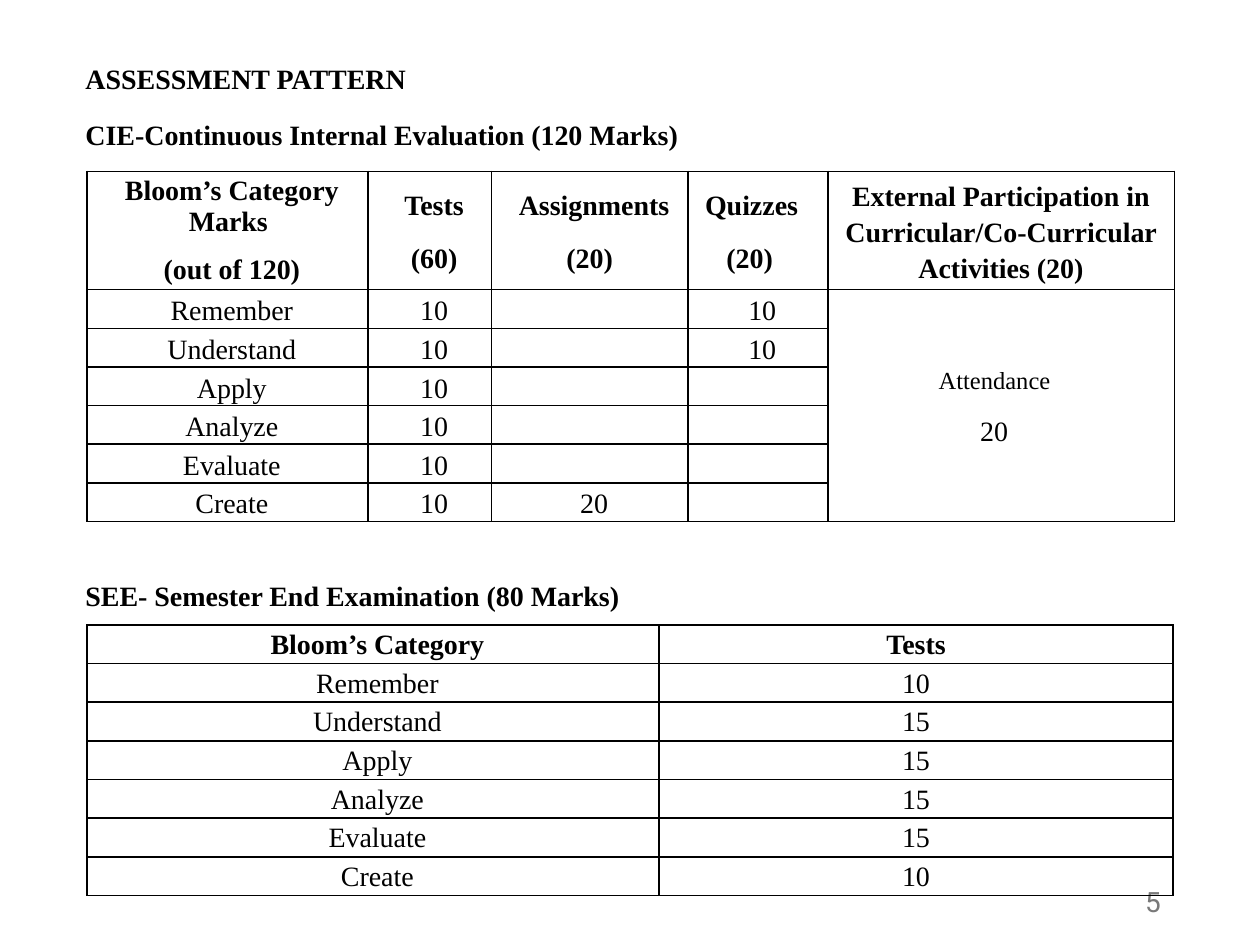
from lxml import etree
from pptx import Presentation
from pptx import util as u
from pptx.dml.color import RGBColor
from pptx.enum import text
from pptx.oxml.ns import qn

SERIF = "Times New Roman"
BLACK = "000000"
GREY = "797979"
LEVELS = ["Remember", "Understand", "Apply", "Analyze", "Evaluate", "Create"]
INDENT = 0.07
CENTER, LEFT = text.PP_ALIGN.CENTER, text.PP_ALIGN.LEFT
RIGHT, JUSTIFY = text.PP_ALIGN.RIGHT, text.PP_ALIGN.JUSTIFY
MIDDLE, TOP = text.MSO_ANCHOR.MIDDLE, text.MSO_ANCHOR.TOP


def color(value):
    return RGBColor.from_string(value)


def write(paragraph, words, size=16, bold=False, font=SERIF, ink=BLACK,
          align=CENTER, spacing=1.15, after=10, left=0, right=0):
    paragraph.alignment = align
    paragraph.line_spacing = spacing
    paragraph.space_after = u.Pt(after)
    properties = paragraph._p.get_or_add_pPr()
    properties.set("marL", str(u.Inches(left)))
    properties.set("marR", str(u.Inches(right)))
    properties.set("indent", "0")
    run = paragraph.add_run()
    run.text = words
    run.font.size = u.Pt(size)
    run.font.bold = bold
    run.font.name = font
    run.font.color.rgb = color(ink)


def write_lines(frame, lines, **style):
    """Each line is a pair: its words and its own style."""
    for number, (words, own) in enumerate(lines):
        paragraph = frame.add_paragraph() if number else frame.paragraphs[0]
        write(paragraph, words, **{**style, **own})


def add_text(slide, box, lines, anchor=TOP, **style):
    shape = slide.shapes.add_textbox(*map(u.Inches, box))
    frame = shape.text_frame
    frame.word_wrap = True
    frame.vertical_anchor = anchor
    write_lines(frame, lines, **style)


def add_borders(cell):
    properties = cell._tc.get_or_add_tcPr()
    for side in ("lnL", "lnR", "lnT", "lnB"):
        line = etree.SubElement(properties, qn(f"a:{side}"), w=str(u.Pt(1)))
        fill = etree.SubElement(line, qn("a:solidFill"))
        etree.SubElement(fill, qn("a:srgbClr"), val=BLACK)


def add_grid(slide, box, widths, heights, anchor):
    frame = slide.shapes.add_table(len(heights), len(widths), *map(u.Inches, box))
    table = frame.table
    table.first_row = table.horz_banding = False
    for column, width in zip(table.columns, widths):
        column.width = u.Inches(width)
    for row, height in zip(table.rows, heights):
        row.height = u.Inches(height)
    for cell in table.iter_cells():
        cell.margin_left = cell.margin_right = 0
        cell.margin_top = cell.margin_bottom = 0
        cell.vertical_anchor = anchor
        add_borders(cell)
        cell.fill.background()
    return table


def add_internal_table(slide, box):
    """Marks of the continuous internal evaluation."""
    table = add_grid(slide, box, [2.23, 0.98, 1.56, 1.11, 2.75],
                     [0.82] + [0.21] * len(LEVELS), MIDDLE)
    shifted = {"left": INDENT}
    headers = [
        [("Bloom’s Category Marks ", {"left": INDENT, "spacing": 1.0}),
         ("(out of 120)", {"left": INDENT, "spacing": 1.0})],
        [("Tests", shifted), ("(60)", shifted)],
        [("Assignments", shifted), ("(20)", {})],
        [("Quizzes", {"right": 0.1}), ("(20)", {"right": 0.13})],
        [("External Participation in Curricular/Co-Curricular Activities (20)",
          {"left": INDENT, "right": INDENT})],
    ]
    for column, lines in enumerate(headers):
        write_lines(table.cell(0, column).text_frame, lines, bold=True)

    # Tests, assignments and quizzes for each level
    marks = [("10", "", "10")] * 2 + [("10", "", "")] * 3 + [("10", "20", "")]
    for row, (level, values) in enumerate(zip(LEVELS, marks), start=1):
        for column, words in enumerate((level, *values)):
            write_lines(table.cell(row, column).text_frame, [(words, shifted)])

    # Attendance spans all levels
    attendance = table.cell(1, 4)
    attendance.merge(table.cell(len(LEVELS), 4))
    write_lines(attendance.text_frame,
                [("Attendance", {"size": 14, "left": 0.88}), ("20", {"left": 1.21})],
                align=LEFT)


def add_semester_table(slide, box):
    """Marks of the semester end examination."""
    rows = [("Bloom’s Category", "Tests"),
            *zip(LEVELS, ["10", "15", "15", "15", "15", "10"])]
    table = add_grid(slide, box, [4.54, 4.08], [0.26] * len(rows), TOP)
    for row, (level, marks) in enumerate(rows):
        write_lines(table.cell(row, 0).text_frame, [(level, {"left": INDENT})], bold=row == 0)
        write_lines(table.cell(row, 1).text_frame, [(marks, {})], bold=row == 0)


def main():
    presentation = Presentation()
    presentation.slide_width = u.Inches(10)
    presentation.slide_height = u.Inches(7.5)
    slide = presentation.slides.add_slide(presentation.slide_layouts[6])

    # Page number
    add_text(slide, (7.06, 6.95, 2.25, 0.4), [("5", {})], anchor=MIDDLE,
             font="Roboto", ink=GREY, align=RIGHT, spacing=1.0, after=0)

    # Tables
    add_internal_table(slide, (0.69, 1.36, 8.62, 2.66))
    add_semester_table(slide, (0.69, 4.96, 8.62, 2.01))

    # Headings
    add_text(slide, (0.58, 0.4, 6.15, 0.84),
             [("ASSESSMENT PATTERN", {}),
              ("CIE-Continuous Internal Evaluation (120 Marks)", {"align": JUSTIFY})],
             bold=True, align=LEFT)
    add_text(slide, (0.58, 4.5, 6.15, 0.39),
             [("SEE- Semester End Examination (80 Marks)", {})], bold=True, align=LEFT)

    presentation.save("out.pptx")


if __name__ == "__main__":
    main()
